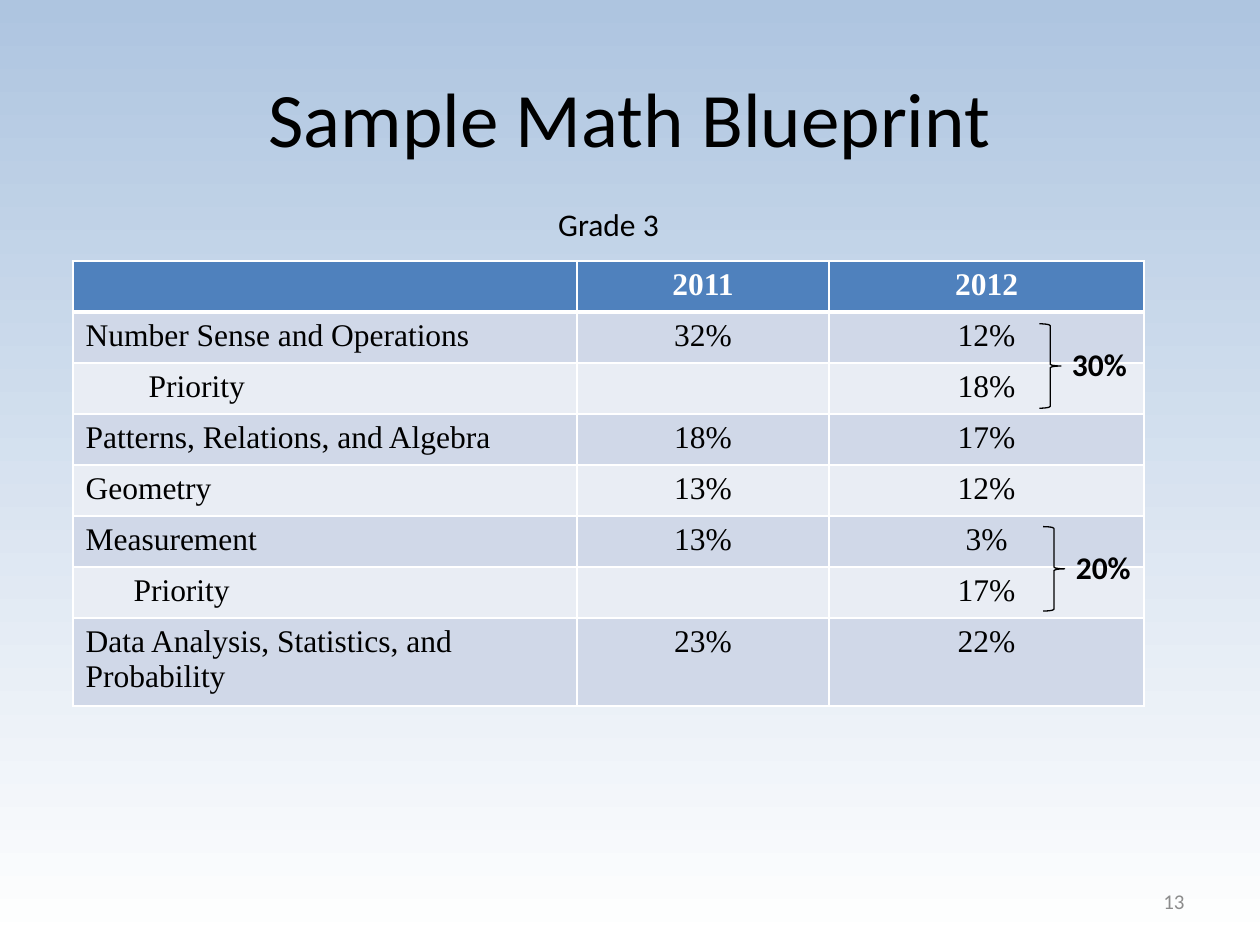
"""Build the sample math blueprint slide with its table and bracketed totals."""
from typing import Any, NamedTuple

import lxml.etree
import pptx
import pptx.dml.color
import pptx.enum.shapes
import pptx.enum.text
import pptx.oxml.ns
import pptx.util

Inches = pptx.util.Inches
ALIGN = pptx.enum.text.PP_ALIGN
ANCHOR = pptx.enum.text.MSO_ANCHOR
BLACK, WHITE, HEADER = "000000", "FFFFFF", "4F81BD"
BANDS = ("D0D8E8", "E9EDF4")
TABLE_LEFT, TABLE_TOP = 0.58, 2.07
COLUMN_WIDTHS = (4, 2, 2.5)


class Row(NamedTuple):
    label: str
    first_year: str
    second_year: str
    indent: float = 0


class Total(NamedTuple):
    text: str
    left: float
    top: float


ROWS = (
    Row("", "2011", "2012"),
    Row("Number Sense and Operations", "32%", "12%"),
    Row("Priority", "", "18%", indent=0.5),
    Row("Patterns, Relations, and Algebra", "18%", "17%"),
    Row("Geometry", "13%", "12%"),
    Row("Measurement", "13%", "3%"),
    Row("Priority", "", "17%", indent=0.38),
    Row("Data Analysis, Statistics, and Probability", "23%", "22%"),
)
TOTALS = (Total("30%", 8.25, 2.57), Total("20%", 8.28, 4.18))


def rgb(value: str) -> pptx.dml.color.RGBColor:
    """Turn a hex string into a colour."""
    return pptx.dml.color.RGBColor.from_string(value)


def write(frame: Any, text: str, *, size: float = 18, font: str = "Calibri",
          color: str = BLACK, bold: bool = False, align: Any = ALIGN.LEFT,
          indent: float = 0) -> None:
    """Put one formatted paragraph into a text frame."""
    frame.word_wrap = True
    paragraph = frame.paragraphs[0]
    paragraph.alignment = align
    if indent:
        properties = paragraph._p.get_or_add_pPr()
        properties.set("marL", "0")
        properties.set("indent", str(Inches(indent)))
    run = paragraph.add_run()
    run.text = text
    run.font.size = pptx.util.Pt(size)
    run.font.name = font
    run.font.bold = bold
    run.font.color.rgb = rgb(color)


def add_text(shapes: Any, text: str, left: float, top: float, width: float,
             height: float = 0.4, anchor: Any = ANCHOR.TOP, **style: Any) -> None:
    """Add a text box with one paragraph."""
    box = shapes.add_textbox(*map(Inches, (left, top, width, height)))
    box.text_frame.vertical_anchor = anchor
    write(box.text_frame, text, **style)


def set_borders(cell: Any, bottom: float) -> None:
    """Give a cell white borders with its own bottom width."""
    qn = pptx.oxml.ns.qn
    properties = cell._tc.get_or_add_tcPr()
    for index, (side, width) in enumerate(
            (("lnL", 1), ("lnR", 1), ("lnT", 1), ("lnB", bottom))):
        line = lxml.etree.Element(qn(f"a:{side}"), w=str(pptx.util.Pt(width)))
        fill = lxml.etree.SubElement(line, qn("a:solidFill"))
        lxml.etree.SubElement(fill, qn("a:srgbClr"), val=WHITE)
        properties.insert(index, line)


def add_blueprint(shapes: Any) -> None:
    """Add the table of shares by strand and year."""
    frame = shapes.add_table(
        len(ROWS), len(COLUMN_WIDTHS), Inches(TABLE_LEFT), Inches(TABLE_TOP),
        Inches(sum(COLUMN_WIDTHS)), Inches(3.24))
    table = frame.table
    for column, width in zip(table.columns, COLUMN_WIDTHS):
        column.width = Inches(width)
    for row_index, row in enumerate(ROWS):
        is_header = row_index == 0
        for column_index, text in enumerate(row[:3]):
            cell = table.cell(row_index, column_index)
            cell.fill.solid()
            cell.fill.fore_color.rgb = rgb(
                HEADER if is_header else BANDS[(row_index - 1) % 2])
            set_borders(cell, 3 if is_header else 1)
            if text:
                write(cell.text_frame, text, font="Times New Roman",
                      color=WHITE if is_header else BLACK, bold=is_header,
                      align=ALIGN.CENTER if column_index else ALIGN.LEFT,
                      indent=0 if column_index else row.indent)


def add_total(shapes: Any, total: Total) -> None:
    """Add a brace grouped with the total it stands for."""
    group = shapes.add_group_shape()
    brace = group.shapes.add_shape(
        pptx.enum.shapes.MSO_SHAPE.RIGHT_BRACE,
        *map(Inches, (total.left, total.top, 0.17, 0.67)))
    brace.shadow.inherit = False
    brace.fill.background()
    brace.line.color.rgb = rgb(BLACK)
    brace.line.width = pptx.util.Pt(0.75)
    add_text(group.shapes, total.text, total.left + 0.16, total.top + 0.12,
             0.67, bold=True)


def main() -> None:
    """Build and save the presentation."""
    presentation = pptx.Presentation()
    presentation.slide_width, presentation.slide_height = Inches(10), Inches(7.5)
    slide = presentation.slides.add_slide(presentation.slide_layouts[5])

    background = slide.background.fill
    background.gradient()
    background.gradient_angle = 270
    for stop, color, position in zip(
            background.gradient_stops, ("AEC5E0", WHITE), (0, 1)):
        stop.color.rgb = rgb(color)
        stop.position = position

    title = slide.shapes.title
    title.left, title.top, title.width, title.height = map(
        Inches, (0.5, 0.3, 9, 1.25))
    title.text_frame.vertical_anchor = ANCHOR.MIDDLE
    write(title.text_frame, "Sample Math Blueprint", size=44, align=ALIGN.CENTER)

    add_text(slide.shapes, "13", 7.17, 6.95, 2.33, anchor=ANCHOR.MIDDLE,
             size=12, color="8C8C8C", align=ALIGN.RIGHT)
    add_blueprint(slide.shapes)
    for total in TOTALS:
        add_total(slide.shapes, total)
    add_text(slide.shapes, "Grade 3", TABLE_LEFT, 1.58, sum(COLUMN_WIDTHS),
             align=ALIGN.CENTER)
    presentation.save("out.pptx")


if __name__ == "__main__":
    main()
